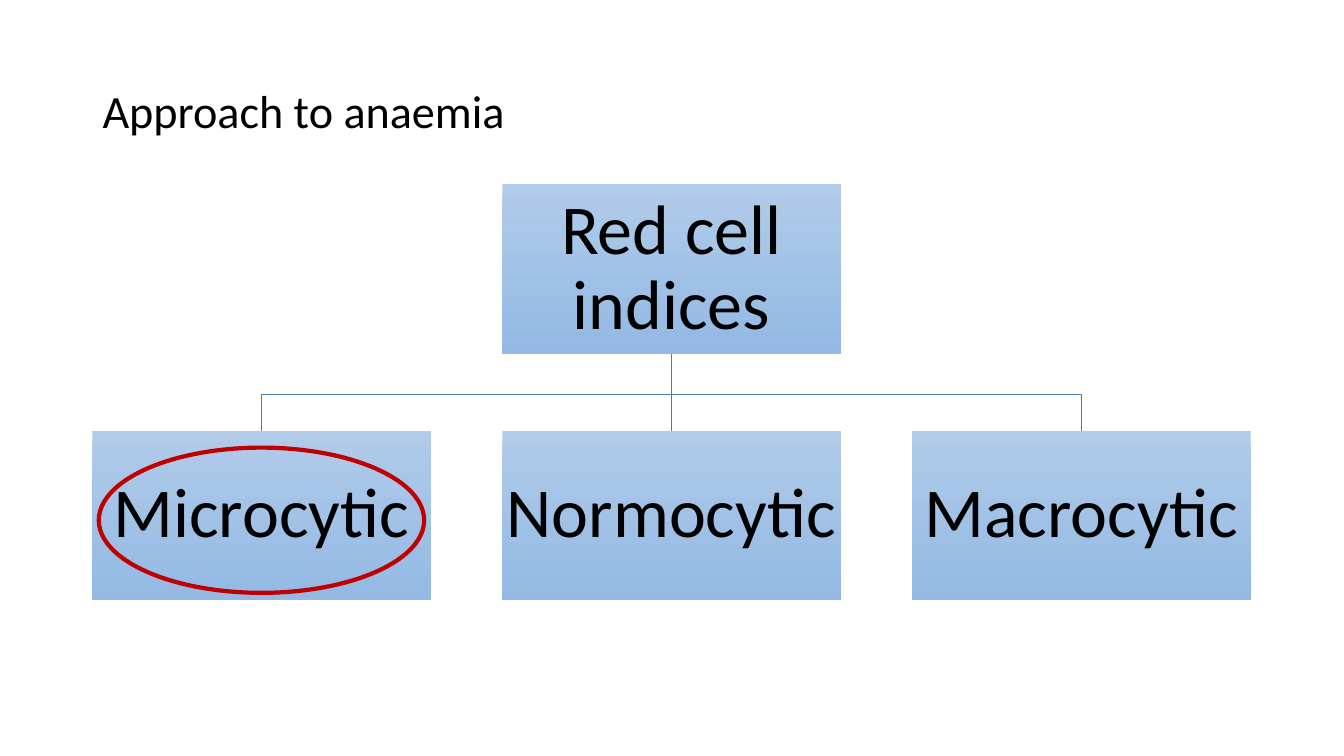
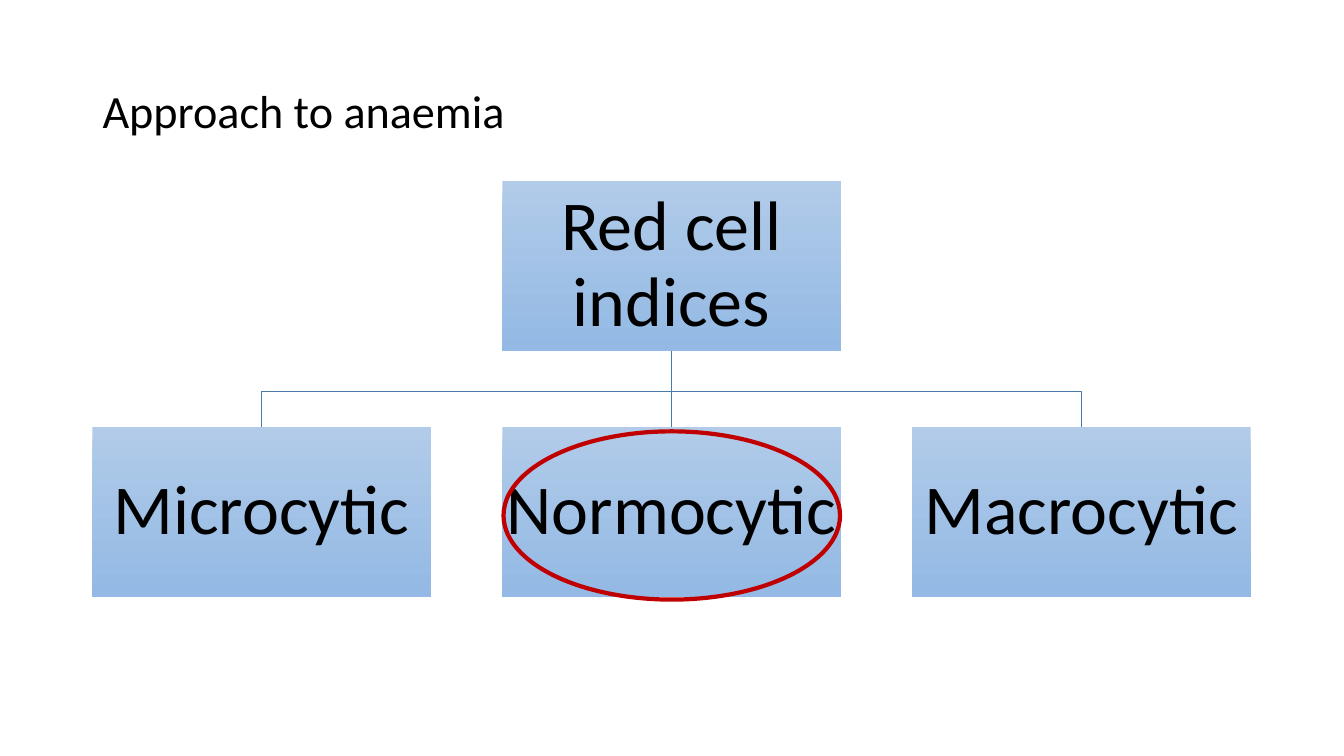
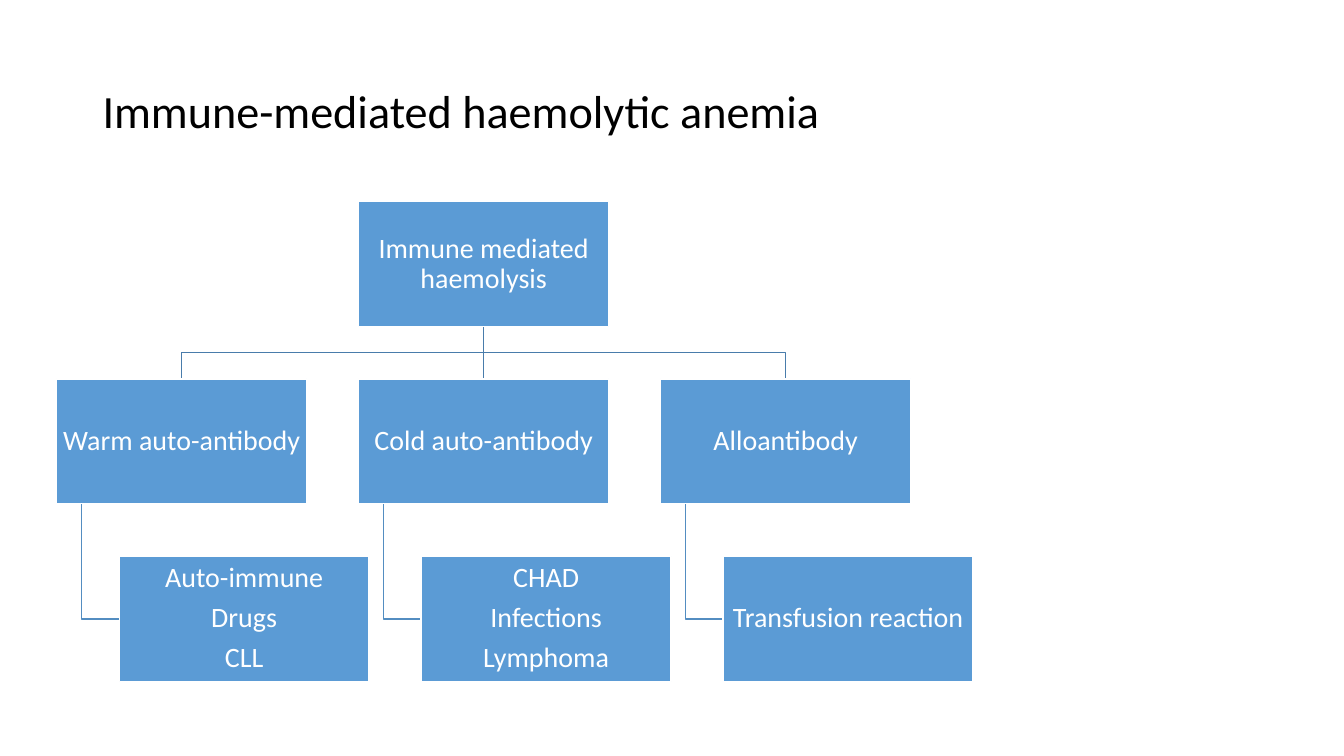
from dataclasses import dataclass

from pptx import Presentation
from pptx.dml.color import RGBColor
from pptx.enum.shapes import MSO_CONNECTOR, MSO_SHAPE
from pptx.enum.text import MSO_ANCHOR, PP_ALIGN
from pptx.oxml.ns import qn
from pptx.util import Cm, Pt
from lxml.etree import SubElement

BLACK = RGBColor(0x00, 0x00, 0x00)
WHITE = RGBColor(0xFF, 0xFF, 0xFF)
PALE_BLUE = RGBColor(0xB1, 0xCB, 0xE9)
SOFT_BLUE = RGBColor(0x93, 0xB9, 0xE4)
BLUE = RGBColor(0x5B, 0x9B, 0xD5)
BRANCH_BLUE = RGBColor(0x49, 0x7C, 0xAB)
LEAF_BLUE = RGBColor(0x53, 0x8D, 0xC1)
RED = RGBColor(0xC0, 0x00, 0x00)
FONT = "Calibri"
TITLE_ONLY = 5


@dataclass
class Box:
    left: float
    top: float
    width: float
    height: float

    @property
    def center(self):
        return self.left + self.width / 2

    @property
    def middle(self):
        return self.top + self.height / 2

    @property
    def bottom(self):
        return self.top + self.height

    def shifted(self, across, down):
        return Box(self.left + across, self.top + down, self.width, self.height)

    def lengths(self):
        return Cm(self.left), Cm(self.top), Cm(self.width), Cm(self.height)


@dataclass
class NodeStyle:
    size: float
    color: RGBColor
    inset: float
    gradient: bool


INDEX_STYLE = NodeStyle(size=50, color=BLACK, inset=0.08, gradient=True)
IMMUNE_STYLE = NodeStyle(size=20, color=WHITE, inset=0.03, gradient=False)
TITLE_BOX = Box(2.33, 1.02, 29.21, 3.68)


def write_text(frame, text, size, color, align=PP_ALIGN.CENTER, inset=None, space_after=0):
    frame.word_wrap = True
    frame.vertical_anchor = MSO_ANCHOR.MIDDLE
    if inset is not None:
        frame.margin_left = frame.margin_right = Cm(inset)
        frame.margin_top = frame.margin_bottom = Cm(inset)
    frame.text = text
    for paragraph in frame.paragraphs:
        paragraph.alignment = align
        paragraph.line_spacing = 0.9
        paragraph.space_after = Pt(space_after)
        paragraph.font.name = FONT
        paragraph.font.size = Pt(size)
        paragraph.font.color.rgb = color


def add_titled_slide(presentation, title):
    slide = presentation.slides.add_slide(presentation.slide_layouts[TITLE_ONLY])
    shape = slide.shapes.title
    shape.left, shape.top, shape.width, shape.height = TITLE_BOX.lengths()
    write_text(shape.text_frame, title, size=33, color=BLACK, align=PP_ALIGN.LEFT)
    return slide


def set_line(shape, color, width=1):
    shape.line.color.rgb = color
    shape.line.width = Pt(width)


def add_straight_line(slide, start, end, color):
    ends = [Cm(value) for value in (*start, *end)]
    connector = slide.shapes.add_connector(MSO_CONNECTOR.STRAIGHT, *ends)
    set_line(connector, color)
    SubElement(connector._element.spPr, qn("a:effectLst"))


def add_bent_line(slide, points, color):
    start, *rest = [(Cm(x), Cm(y)) for x, y in points]
    builder = slide.shapes.build_freeform(*start)
    builder.add_line_segments(rest, close=False)
    shape = builder.convert_to_shape()
    shape.shadow.inherit = False
    shape.fill.background()
    set_line(shape, color)


def add_node(slide, box, text, style):
    shape = slide.shapes.add_shape(MSO_SHAPE.RECTANGLE, *box.lengths())
    shape.shadow.inherit = False
    if style.gradient:
        shape.fill.gradient()
        shape.fill.gradient_angle = 270
        for stop, color in zip(shape.fill.gradient_stops, (PALE_BLUE, SOFT_BLUE)):
            stop.color.rgb = color
        shape.line.fill.background()
    else:
        shape.fill.solid()
        shape.fill.fore_color.rgb = BLUE
        set_line(shape, WHITE)
    write_text(shape.text_frame, text, size=style.size, color=style.color,
               inset=style.inset, space_after=0.35 * style.size)


def add_ring(slide, box):
    shape = slide.shapes.add_shape(MSO_SHAPE.OVAL, *box.lengths())
    shape.shadow.inherit = False
    shape.fill.background()
    set_line(shape, RED, width=3)


def add_tree(slide, first, pitch, drop, bus, root_text, child_texts, style):
    children = [first.shifted(index * pitch, drop) for index in range(len(child_texts))]
    root = first.shifted(pitch, 0)
    bus_top = root.bottom + bus
    for child in children:
        start, end = (root.center, root.bottom), (child.center, child.top)
        if child.left == root.left:
            add_straight_line(slide, start, end, BRANCH_BLUE)
        else:
            corners = [(root.center, bus_top), (child.center, bus_top)]
            add_bent_line(slide, [start, *corners, end], BRANCH_BLUE)
    add_node(slide, root, root_text, style)
    for child, text in zip(children, child_texts):
        add_node(slide, child, text, style)
    return children


def add_leaf(slide, parent, drop, text, style):
    leaf = parent.shifted(parent.width / 4, drop)
    stem = parent.left + parent.width / 10
    points = [(stem, parent.bottom), (stem, leaf.middle), (leaf.left, leaf.middle)]
    add_bent_line(slide, points, LEAF_BLUE)
    add_node(slide, leaf, text, style)


def build_index_slide(presentation, top, ringed, ring):
    slide = add_titled_slide(presentation, "Approach to anaemia")
    children = add_tree(slide, Box(2.33, top, 8.53, 4.27), pitch=10.33, drop=6.2, bus=1.02,
                        root_text="Red cell indices",
                        child_texts=["Microcytic", "Normocytic", "Macrocytic"],
                        style=INDEX_STYLE)
    target = children[ringed]
    add_ring(slide, ring.shifted(target.left, target.top))


def build_immune_slide(presentation):
    slide = add_titled_slide(presentation, "Immune-mediated haemolytic anemia")
    drop = 4.47
    causes = {
        "Warm auto-antibody": "Auto-immune\nDrugs\nCLL",
        "Cold auto-antibody": "CHAD\nInfections\nLymphoma",
        "Alloantibody": "Transfusion reaction",
    }
    children = add_tree(slide, Box(1.43, 5.08, 6.3, 3.15), pitch=7.61, drop=drop, bus=0.66,
                        root_text="Immune mediated haemolysis",
                        child_texts=list(causes), style=IMMUNE_STYLE)
    for child, text in zip(children, causes.values()):
        add_leaf(slide, child, drop, text, IMMUNE_STYLE)


def main():
    presentation = Presentation()
    presentation.slide_width = Cm(33.87)
    presentation.slide_height = Cm(19.05)
    build_index_slide(presentation, top=4.65, ringed=0, ring=Box(0.16, 0.43, 8.2, 3.66))
    build_index_slide(presentation, top=4.57, ringed=1, ring=Box(0.03, 0.1, 8.48, 4.24))
    build_immune_slide(presentation)
    presentation.save("out.pptx")


if __name__ == "__main__":
    main()
